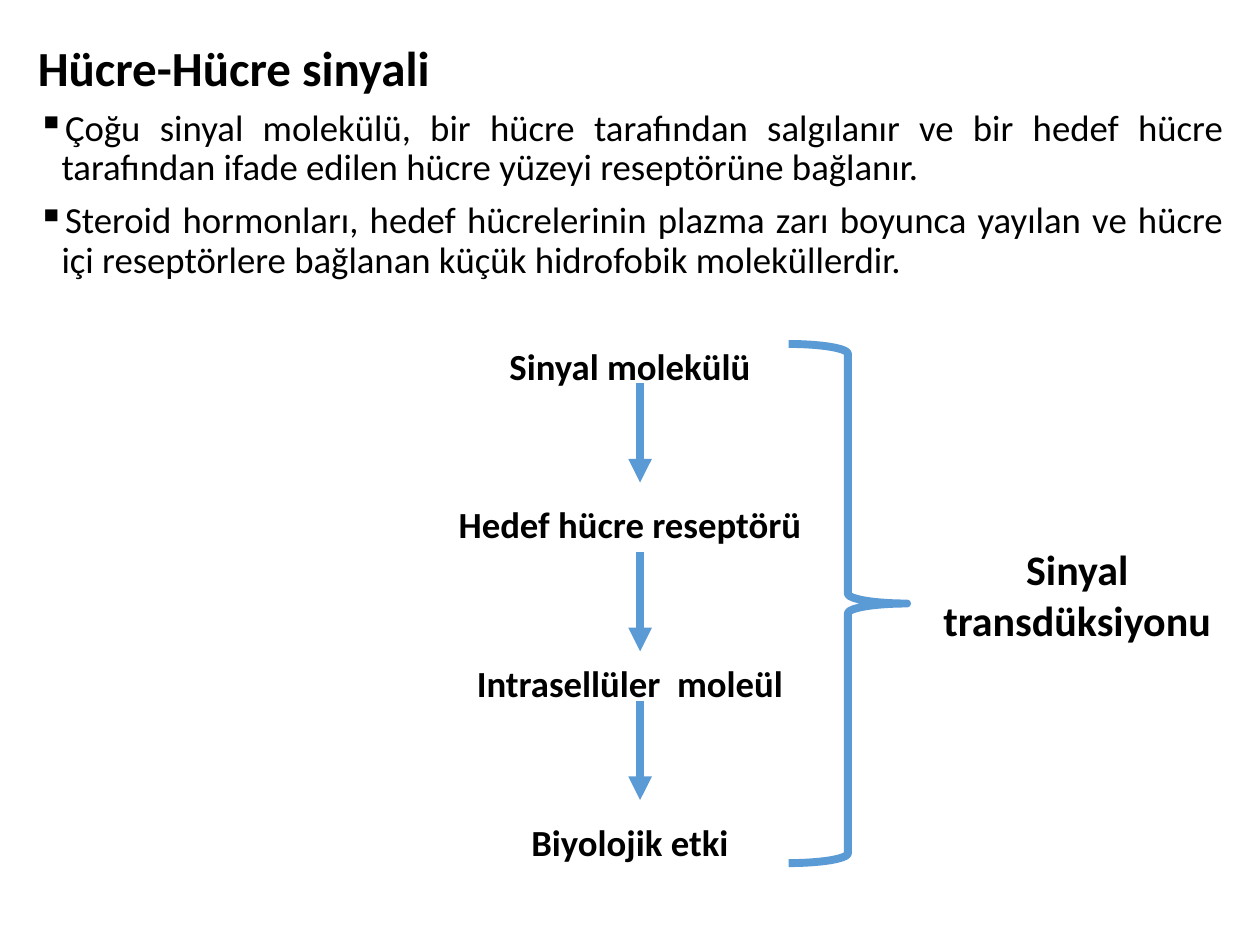
from dataclasses import dataclass

from lxml import etree
from pptx import Presentation
from pptx.dml.color import RGBColor
from pptx.enum.shapes import MSO_CONNECTOR, MSO_SHAPE
from pptx.enum.text import MSO_ANCHOR, PP_ALIGN
from pptx.oxml.ns import qn
from pptx.util import Inches, Pt

LEFT, CENTER, JUSTIFY = PP_ALIGN.LEFT, PP_ALIGN.CENTER, PP_ALIGN.JUSTIFY
MIDDLE, TOP = MSO_ANCHOR.MIDDLE, MSO_ANCHOR.TOP
STRAIGHT = MSO_CONNECTOR.STRAIGHT
RIGHT_BRACE = MSO_SHAPE.RIGHT_BRACE


@dataclass(frozen=True)
class Theme:
    font: str = "Calibri"
    ink: RGBColor = RGBColor(0, 0, 0)
    accent: RGBColor = RGBColor(0x5B, 0x9B, 0xD5)
    title_size: int = 28
    body_size: int = 21
    caption_size: int = 24
    line_width: float = 4.5
    bullet: str = "▪"
    indent: float = 0.19


THEME = Theme()
SLIDE_WIDTH, SLIDE_HEIGHT = 10, 7.5
COLUMNS, ROWS = 100, 75
TITLE = "Hücre-Hücre sinyali"
BULLETS = [
    "Çoğu sinyal molekülü, bir hücre tarafından salgılanır ve bir hedef hücre "
    "tarafından ifade edilen hücre yüzeyi reseptörüne bağlanır.",
    "Steroid hormonları, hedef hücrelerinin plazma zarı boyunca yayılan ve hücre "
    "içi reseptörlere bağlanan küçük hidrofobik moleküllerdir.",
]
STEPS = ["Sinyal molekülü", "Hedef hücre reseptörü", "Intrasellüler  moleül", "Biyolojik etki"]
CAPTION = ["Sinyal", "transdüksiyonu"]
STEP_TOP, STEP_PITCH, STEP_HEIGHT = 26.5, 12.6, 5
ARROW_COLUMN, ARROW_LENGTH = 50.8, 7.9
ARROW_TOPS = [30.4, 43.8, 55.6]


def column(count):
    return Inches(SLIDE_WIDTH * count / COLUMNS)


def row(count):
    return Inches(SLIDE_HEIGHT * count / ROWS)


def area(left, top, width, height):
    return column(left), row(top), column(width), row(height)


def write_paragraphs(frame, texts, size, bold, align, anchor):
    frame.word_wrap = True
    frame.vertical_anchor = anchor
    for index, text in enumerate(texts):
        para = frame.paragraphs[0] if index == 0 else frame.add_paragraph()
        para.alignment = align
        span = para.add_run()
        span.text = text
        span.font.name = THEME.font
        span.font.size = Pt(size)
        span.font.bold = bold
        span.font.color.rgb = THEME.ink


def add_title(page):
    title = page.shapes.title
    title.left, title.top, title.width, title.height = area(2, 2.3, 96.1, 6)
    write_paragraphs(title.text_frame, [TITLE], THEME.title_size, True, LEFT, MIDDLE)


def add_text(page, place, texts, size, bold=True, align=CENTER, anchor=MIDDLE):
    box = page.shapes.add_textbox(*place)
    write_paragraphs(box.text_frame, texts, size, bold, align, anchor)
    return box


def add_bullets(page):
    place = area(2, 8.2, 96.1, 15)
    box = add_text(page, place, BULLETS, THEME.body_size, False, JUSTIFY, TOP)
    for para in box.text_frame.paragraphs:
        para.line_spacing = 0.9
        para.space_before = Pt(7.5)
        properties = para._p.get_or_add_pPr()
        properties.set("marL", str(Inches(THEME.indent)))
        properties.set("indent", str(-Inches(THEME.indent)))
        etree.SubElement(properties, qn("a:buChar"), char=THEME.bullet)


def style_line(line):
    line.color.rgb = THEME.accent
    line.width = Pt(THEME.line_width)


def add_arrow(page, top):
    x = column(ARROW_COLUMN)
    arrow = page.shapes.add_connector(STRAIGHT, x, row(top), x, row(top + ARROW_LENGTH))
    style_line(arrow.line)
    etree.SubElement(arrow.line._get_or_add_ln(), qn("a:tailEnd"), type="triangle")
    etree.SubElement(arrow._element.spPr, qn("a:effectLst"))


def add_brace(page):
    brace = page.shapes.add_shape(RIGHT_BRACE, *area(62.6, 27.3, 9.4, 41.2))
    brace.shadow.inherit = False
    brace.fill.background()
    style_line(brace.line)


def main():
    deck = Presentation()
    deck.slide_width, deck.slide_height = Inches(SLIDE_WIDTH), Inches(SLIDE_HEIGHT)
    page = deck.slides.add_slide(deck.slide_layouts.get_by_name("Title Only"))
    add_title(page)
    add_bullets(page)
    for index, step in enumerate(STEPS):
        place = area(30, STEP_TOP + index * STEP_PITCH, 40, STEP_HEIGHT)
        add_text(page, place, [step], THEME.body_size)
    for top in ARROW_TOPS:
        add_arrow(page, top)
    add_brace(page)
    add_text(page, area(72.5, 42.6, 26, 9.1), CAPTION, THEME.caption_size)
    deck.save("out.pptx")


if __name__ == "__main__":
    main()
